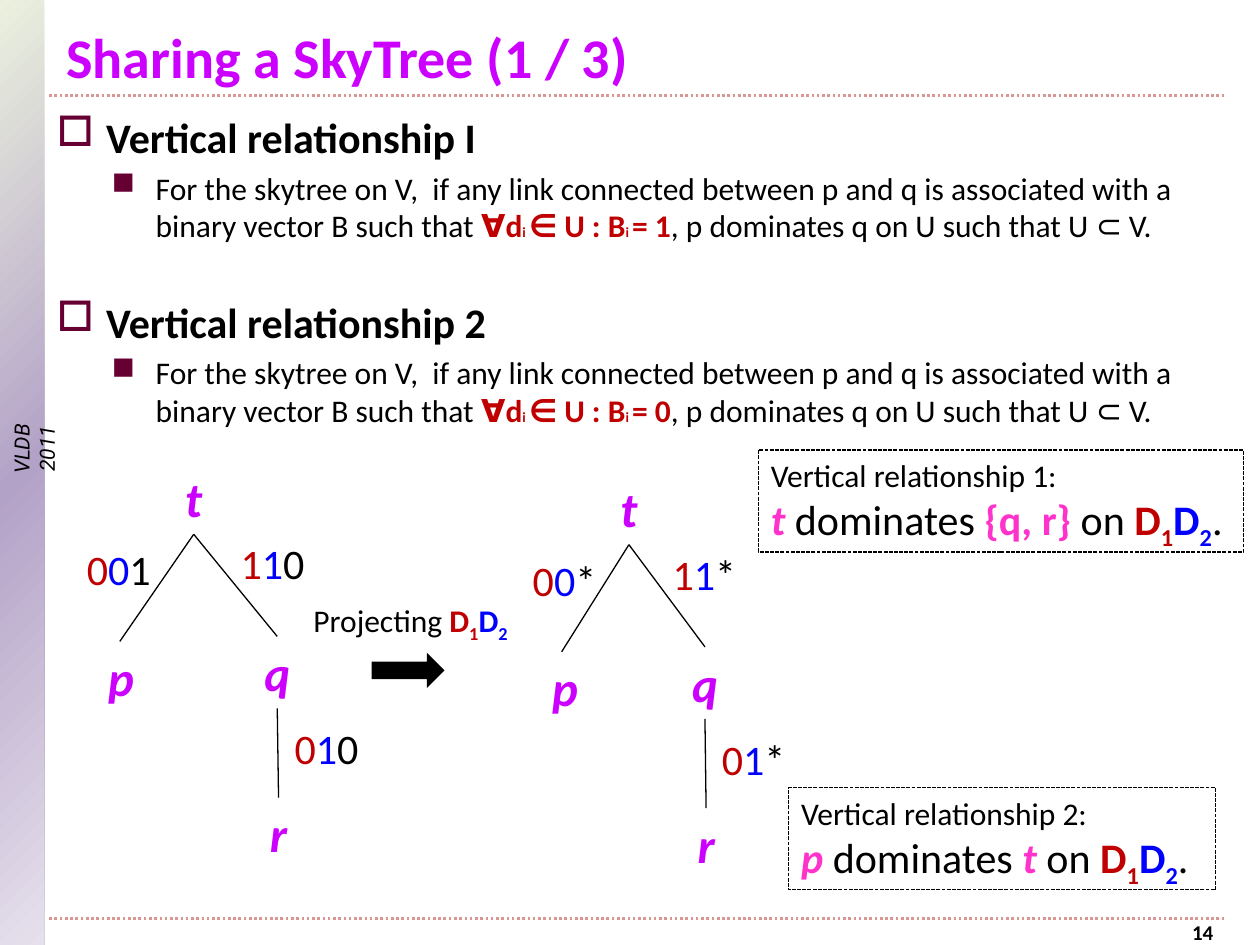
from lxml import etree
from pptx import Presentation
from pptx import util as u
from pptx.dml.color import RGBColor
from pptx.enum import dml, shapes, text
from pptx.oxml import parse_xml
from pptx.oxml.ns import nsdecls, qn
from pptx.util import Cm

BLACK = RGBColor(0x00, 0x00, 0x00)
MAGENTA = RGBColor(0xCC, 0x00, 0xFF)
PINK = RGBColor(0xFF, 0x33, 0xCC)
RED = RGBColor(0xC0, 0x00, 0x00)
BLUE = RGBColor(0x00, 0x00, 0xFF)
ROSE = RGBColor(0xD9, 0x96, 0x94)
WINE = RGBColor(0x66, 0x00, 0x33)

D1D2 = [("D", RED, "b"), ("1", RED, "b_"), ("D", BLUE, "b"), ("2", BLUE, "b_")]

# Tree layout in cm from its top left corner: left, top, width
NODES = {"t": (1.63, 0, 1.55), "p": (0.43, 3.61, 0.97),
         "q": (3.53, 3.51, 1.12), "r": (3.43, 6.76, 1.37)}
LINKS = ["tp", "tq", "qr"]
LABEL_SPOTS = [(0, 1.52), (3.1, 1.4), (4.19, 5.13)]


def write(p, size, *parts, font="Calibri"):
    """Add (text, colour, style) runs; style letters: b bold, i italic, _ subscript."""
    for words, color, style in parts:
        r = p.add_run()
        r.text = words
        r.font.name = font
        r.font.size = u.Pt(size)
        r.font.color.rgb = color
        r.font.bold = "b" in style
        r.font.italic = "i" in style
        if "_" in style:
            r.font._element.set("baseline", "-25000")


def add_text(parent, box, size, *parts, align=text.PP_ALIGN.LEFT,
             anchor=text.MSO_ANCHOR.TOP, font="Calibri"):
    s = parent.add_textbox(*map(Cm, box))
    tf = s.text_frame
    tf.word_wrap = True
    tf.vertical_anchor = anchor
    p = tf.paragraphs[0]
    p.alignment = align
    write(p, size, *parts, font=font)
    return s


def add_line(parent, start, end, color=BLACK, width=0.75, dash=None):
    line = parent.add_connector(shapes.MSO_CONNECTOR.STRAIGHT, *start, *end)
    line.line.color.rgb = color
    line.line.width = u.Pt(width)
    if dash:
        line.line.dash_style = dash
    etree.SubElement(line._element.spPr, qn("a:effectLst"))
    return line


def add_side_band(s):
    band = s.shapes.add_shape(shapes.MSO_SHAPE.RECTANGLE, 0, 0, Cm(0.89), Cm(19.05))
    band.shadow.inherit = False
    band.line.fill.background()
    stops = "".join(f'<a:gs pos="{pos}"><a:srgbClr val="{color}"/></a:gs>' for pos, color in
                    [(0, "E6E0EC"), (50000, "B3A2C7"), (100000, "EBF1DE")])
    band._element.spPr.find(qn("a:prstGeom")).addnext(parse_xml(
        f'<a:gradFill {nsdecls("a")}><a:gsLst>{stops}</a:gsLst>'
        '<a:path path="circle"><a:fillToRect l="100000" t="100000"/></a:path></a:gradFill>'))
    venue = add_text(s.shapes, (0.05, 7.8, 1.02, 2.5), 12, ("VLDB 2011", BLACK, "i"),
                     align=text.PP_ALIGN.CENTER, font="Roboto")
    venue.text_frame._txBody.bodyPr.set("vert", "vert270")


def add_bullet(p, char, left, hang, before):
    pPr = p._p.get_or_add_pPr()
    pPr.set("marL", str(Cm(left)))
    pPr.set("indent", str(-Cm(hang)))
    color = etree.SubElement(pPr, qn("a:buClr"))
    etree.SubElement(color, qn("a:srgbClr"), val=str(WINE))
    etree.SubElement(pPr, qn("a:buChar"), char=char)
    p.space_before = u.Pt(before)


def add_relationships(s):
    body = s.shapes.add_textbox(Cm(0.89), Cm(2.13), Cm(23.8), Cm(9))
    tf = body.text_frame
    tf.word_wrap = True
    for i, (name, value) in enumerate([("I", 1), ("2", 0)]):
        p = tf.add_paragraph() if i else tf.paragraphs[0]
        add_bullet(p, "□", 1, 1, 30 * i)
        write(p, 24, (f"Vertical relationship {name}", BLACK, "b"))
        p = tf.add_paragraph()
        p.level = 1
        add_bullet(p, "■", 2, 0.89, 3.6)
        write(p, 18, ("For the skytree on V,  if any link connected between p and q is "
                      "associated with a binary vector B such that ", BLACK, ""))
        for size, words in [(18, "∀d"), (8, "i "), (18, "∈ U : B"), (8, "i "),
                            (18, f"= {value}")]:
            write(p, size, (words, RED, "b"))
        write(p, 18, (", p dominates q on U such that U ⊂ V.", BLACK, ""))


def add_tree(s, left, top, scale, vectors):
    """Draw the skytree, squeezed sideways by scale, with a vector on each link."""
    group = s.shapes.add_group_shape().shapes
    nodes = {name: add_text(group, (left + scale * x, top + y, scale * w, 1.45), 28,
                            (name, MAGENTA, "bi"), align=text.PP_ALIGN.CENTER)
             for name, (x, y, w) in NODES.items()}
    for a, b in LINKS:
        upper, lower = nodes[a], nodes[b]
        link = add_line(group, (upper.left + upper.width // 2, upper.top + upper.height),
                        (lower.left + lower.width // 2, lower.top))
        link.begin_connect(upper, 2)
        link.end_connect(lower, 0)
    for (x, y), vector in zip(LABEL_SPOTS, vectors):
        add_text(group, (left + scale * x, top + y, 2.1, 1.27), 24,
                 *zip(vector, (RED, BLUE, BLACK), ("", "", "")))


def add_callout(s, box, heading, *parts):
    sp = s.shapes.add_shape(shapes.MSO_SHAPE.RECTANGLE, *map(Cm, box))
    sp.shadow.inherit = False
    sp.fill.background()
    sp.line.color.rgb = BLACK
    sp.line.width = u.Pt(0.75)
    sp.line.dash_style = dml.MSO_LINE.SQUARE_DOT
    sp.line._ln.find(qn("a:prstDash")).set("val", "sysDash")
    tf = sp.text_frame
    tf.word_wrap = True
    tf.vertical_anchor = text.MSO_ANCHOR.TOP
    first, second = tf.paragraphs[0], tf.add_paragraph()
    first.alignment = second.alignment = text.PP_ALIGN.LEFT
    write(first, 18, (heading, BLACK, ""))
    write(second, 24, *parts, ("on ", BLACK, ""), *D1D2, (".", BLACK, ""))


def add_projection(s):
    add_text(s.shapes, (6.07, 11.99, 4.83, 1.02), 18, ("Projecting ", BLACK, ""), *D1D2)
    arrow = s.shapes.add_shape(shapes.MSO_SHAPE.RIGHT_ARROW,
                               Cm(7.49), Cm(13.16), Cm(1.47), Cm(0.71))
    arrow.shadow.inherit = False
    arrow.fill.solid()
    arrow.fill.fore_color.rgb = BLACK
    arrow.line.fill.background()


def main():
    prs = Presentation()
    prs.slide_width, prs.slide_height = Cm(25.4), Cm(19.05)
    s = prs.slides.add_slide(prs.slide_layouts[6])

    add_side_band(s)
    for y in (1.93, 18.52):
        add_line(s.shapes, (Cm(0.99), Cm(y)), (Cm(24.69), Cm(y)), ROSE, 1.5,
                 dml.MSO_LINE.ROUND_DOT)
    add_text(s.shapes, (1.09, 0, 21, 1.93), 32, ("Sharing a SkyTree (1 / 3)", MAGENTA, "b"),
             anchor=text.MSO_ANCHOR.BOTTOM)
    add_relationships(s)
    add_text(s.shapes, (22.5, 18.52, 2.21, 0.53), 12, ("14", BLACK, "b"),
             align=text.PP_ALIGN.RIGHT, anchor=text.MSO_ANCHOR.MIDDLE)

    add_tree(s, 1.5, 9.32, 1, ["001", "110", "010"])
    add_tree(s, 10.49, 9.53, 0.91, ["00*", "11*", "01*"])
    add_projection(s)
    add_callout(s, (15.29, 9.07, 9.78, 2.06), "Vertical relationship 1:",
                ("t ", PINK, "bi"), ("dominates ", BLACK, ""), ("{q, r} ", PINK, "b"))
    add_callout(s, (15.9, 15.88, 8.61, 2.06), "Vertical relationship 2:",
                ("p", PINK, "bi"), (" dominates ", BLACK, ""), ("t ", PINK, "bi"))
    prs.save("out.pptx")


if __name__ == "__main__":
    main()
